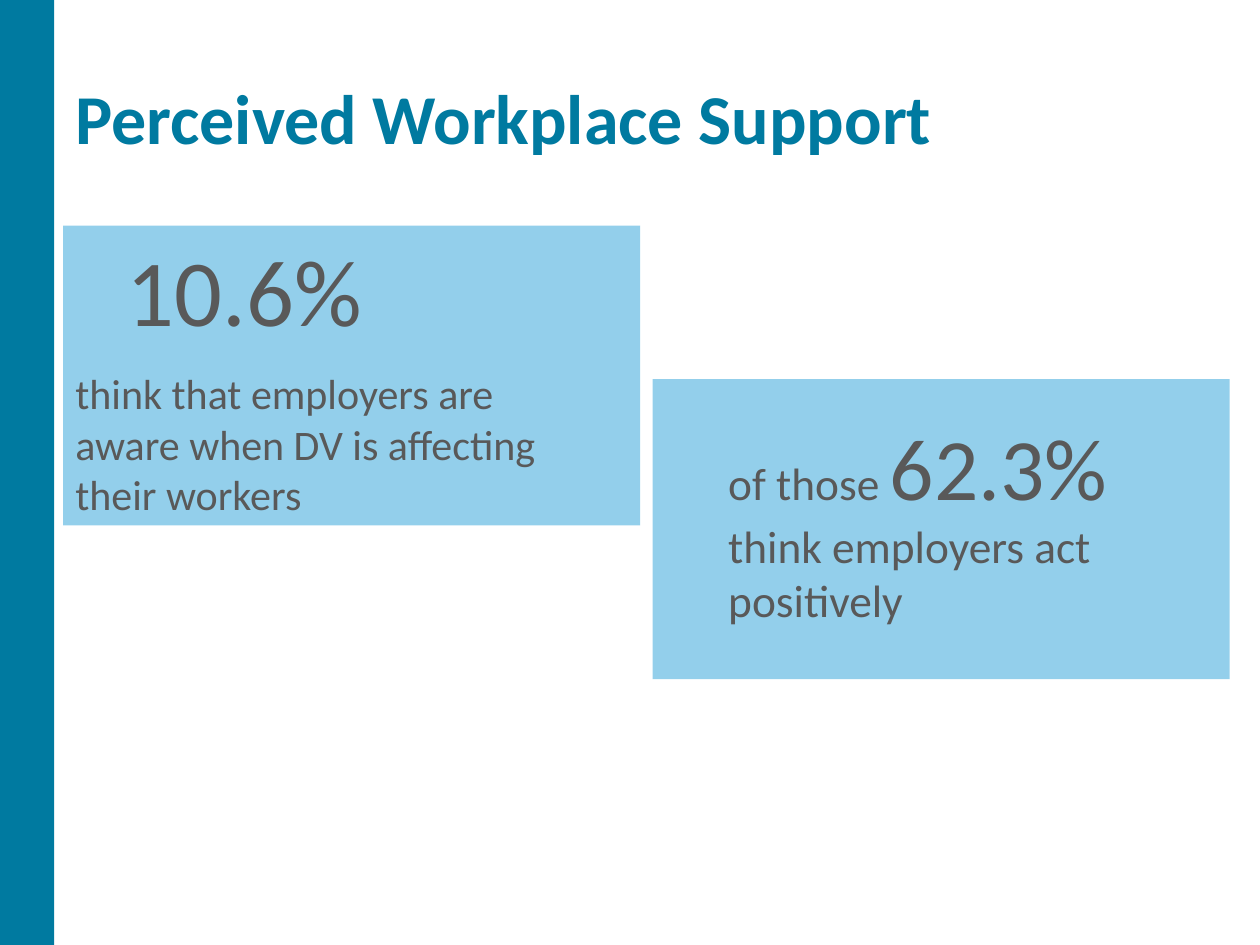
from dataclasses import dataclass

from lxml import etree
from pptx import Presentation
from pptx.dml.color import RGBColor
from pptx.enum.shapes import MSO_SHAPE
from pptx.enum.text import MSO_ANCHOR
from pptx.oxml.ns import qn
from pptx.util import Inches, Pt

RECT = MSO_SHAPE.RECTANGLE
TOP, MIDDLE = MSO_ANCHOR.TOP, MSO_ANCHOR.MIDDLE


@dataclass(frozen=True)
class Theme:
    font: str = "Calibri"
    teal: str = "007AA0"
    sky: str = "28A0D8"
    grey: str = "595959"
    title: float = 40
    figure: float = 54
    inline_figure: float = 50
    body: float = 24
    inline_body: float = 25.9


class SlideBuilder:
    def __init__(self, prs, theme):
        self.theme = theme
        self.s = prs.slides.add_slide(prs.slide_layouts[6])

    def panel(self, box, color, opacity=100):
        sp = self.s.shapes.add_shape(RECT, *map(Inches, box))
        sp.shadow.inherit = False
        sp.line.fill.background()
        sp.fill.solid()
        sp.fill.fore_color.rgb = RGBColor.from_string(color)
        if opacity < 100:
            clr = sp._element.spPr.find(qn("a:solidFill"))[0]
            etree.SubElement(clr, qn("a:alpha"), val=str(opacity * 1000))

    def text(self, box, runs, color, bold=False, anchor=TOP, left_inset=0.1):
        """Write one paragraph from (text, size) runs."""
        sp = self.s.shapes.add_textbox(*map(Inches, box))
        tf = sp.text_frame
        tf.word_wrap = True
        tf.vertical_anchor = anchor
        tf.margin_left = Inches(left_inset)
        p = tf.paragraphs[0]
        for content, size in runs:
            r = p.add_run()
            r.text = content
            r.font.name = self.theme.font
            r.font.size = Pt(size)
            r.font.bold = bold
            r.font.color.rgb = RGBColor.from_string(color)


def main():
    prs = Presentation()
    prs.slide_width, prs.slide_height = Inches(10), Inches(7.5)
    t = Theme()
    b = SlideBuilder(prs, t)

    b.panel((0, 0, 0.43, 7.5), t.teal)
    b.text((0.5, 0.3, 9, 1.25), [("Perceived Workplace Support", t.title)],
           t.teal, bold=True, anchor=MIDDLE)

    for left, top in ((0.5, 1.79), (5.18, 3.01)):
        b.panel((left, top, 4.58, 2.38), t.sky, opacity=50)

    b.text((0.91, 1.79, 2.44, 1.63), [("10.6%", t.figure)], t.grey)
    b.text((0.5, 2.87, 4.37, 0.71),
           [("think that employers are aware when DV is affecting their workers",
             t.body)], t.grey)
    b.text((5.18, 3.23, 4.46, 1.51),
           [("of those ", t.inline_body),
            ("62.3% ", t.inline_figure),
            ("think employers act positively", t.inline_body)],
           t.grey, left_inset=0.6)

    prs.save("out.pptx")


if __name__ == "__main__":
    main()
